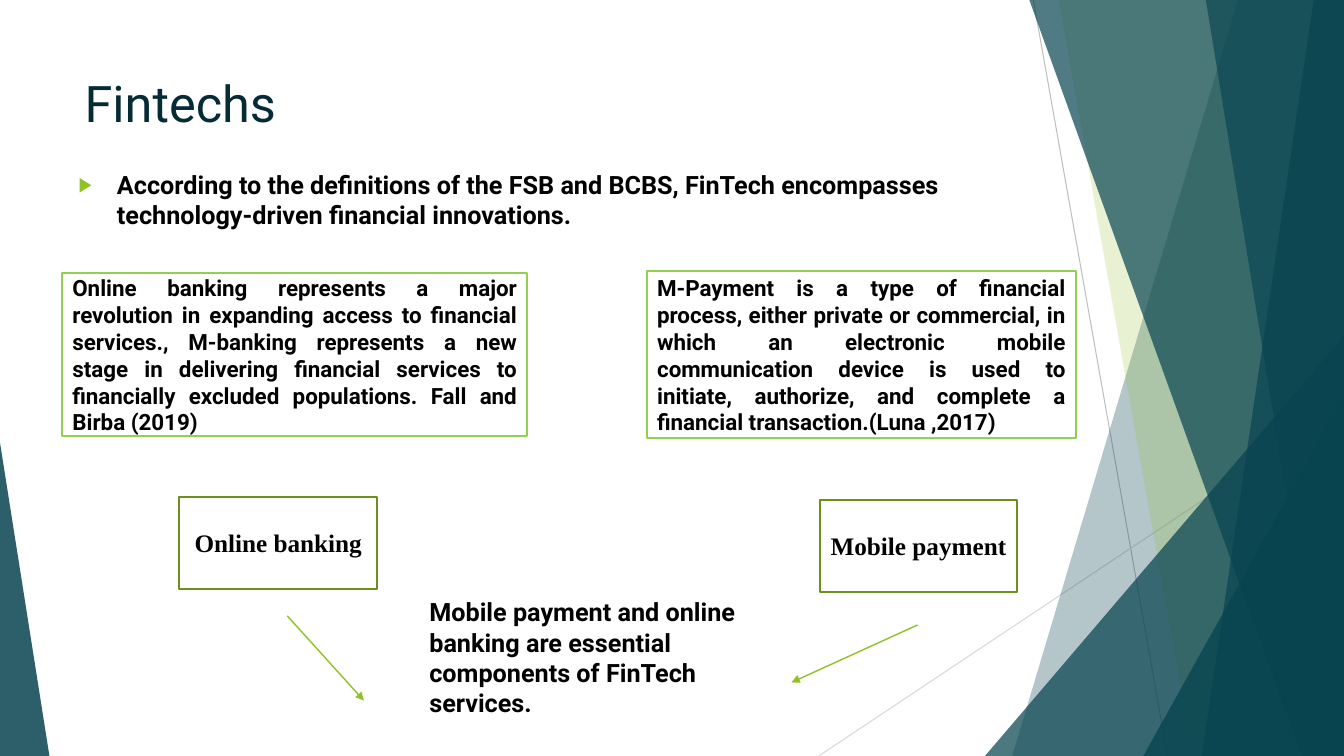
"""Build the Fintechs slide with its definitions, labels and conclusion."""
from lxml.etree import SubElement
from pptx import Presentation
from pptx.dml.color import RGBColor
from pptx.enum.shapes import MSO_CONNECTOR as Connector, MSO_SHAPE as Shape
from pptx.enum.text import MSO_ANCHOR as Anchor, MSO_AUTO_SIZE as Fit, PP_ALIGN as Align
from pptx.oxml.ns import qn
from pptx.util import Inches, Pt

WIDTH, HEIGHT = Inches(13.33), Inches(7.5)
TEAL, GREEN, BLACK = "084450", "90C226", "000000"

# All places are percentages of the slide's width and height.
HEADING = ("Fintechs", (5.55, 8.93, 70.52, 19.2))
STATEMENT = (
    "According to the definitions of the FSB and BCBS, FinTech encompasses "
    "technology-driven financial innovations.",
    (5.1, 21.73, 70.52, 56.53),
)
DEFINITIONS = [
    ("Online banking represents a major revolution in expanding access to financial "
     "services., M-banking represents a new stage in delivering financial services to "
     "financially excluded populations. Fall and Birba (2019) ",
     (4.65, 36.13, 34.58, 21.6)),
    ("M-Payment is a type of financial process, either private or commercial, in which "
     "an electronic mobile communication device is used to initiate, authorize, and "
     "complete a financial transaction.(Luna ,2017)",
     (48.16, 35.87, 31.88, 22.13)),
]
LABELS = [
    ("Online banking", (13.35, 65.73, 14.7, 12.13)),
    ("Mobile payment", (60.99, 66.13, 14.7, 12.13)),
]
CONCLUSION = (
    "Mobile payment and online banking are essential components of FinTech services.",
    (31.21, 78.27, 24.91, 17.47),
)
ARROWS = [(21.38, 81.47, 27.08, 92.67), (68.27, 82.67, 58.89, 90.27)]
RAYS = [((76.89, 0, 86.87, 100), "BFBFBF"), ((100, 53.73, 60.92, 100), "D9D9D9")]
FACETS = [
    ("band", (92.12, 75.32), TEAL, 30),
    ("band", (78.77, 88.75), GREEN, 20),
    ("right corner", (73.29, 44.4, 26.71, 55.6), TEAL, 72),
    ("band", (76.59, 96.85), TEAL, 70),
    ("band", (97.75, 89.42), TEAL, 70),
    ("band", (89.72, 98.87), TEAL, 65),
    ("right corner", (85.07, 52.4, 14.93, 47.6), TEAL, 80),
    ("left corner", (0, 58.53, 3.68, 41.47), TEAL, 85),
]
APEX = {"right corner": 1, "left corner": 0}


def rgb(color):
    return RGBColor.from_string(color)


def place(shares):
    return [round(share * side / 100) for share, side in zip(shares, (WIDTH, HEIGHT) * 2)]


def assign(target, **values):
    for name, value in values.items():
        setattr(target, name, value)


def write(shape, text, size, color=BLACK, font="Roboto", bold=True,
          align=Align.LEFT, anchor=Anchor.TOP, fit=Fit.NONE):
    frame = shape.text_frame
    frame.text = text
    assign(frame, word_wrap=True, auto_size=fit, vertical_anchor=anchor)
    paragraph = frame.paragraphs[0]
    paragraph.alignment = align
    run_font = paragraph.runs[0].font
    assign(run_font, name=font, size=Pt(size), bold=bold)
    run_font.color.rgb = rgb(color)
    return paragraph


def add_line(shares, color, width, arrow=False):
    line = slide.shapes.add_connector(Connector.STRAIGHT, *place(shares))
    line.line.color.rgb = rgb(color)
    line.line.width = Pt(width)
    properties = line.element.spPr
    if arrow:
        SubElement(properties.find(qn("a:ln")), qn("a:tailEnd"), type="triangle")
    SubElement(properties, qn("a:effectLst"))


def add_facet(kind, shares, color, opacity):
    if kind == "band":
        top, bottom = shares
        corners = [place(point) for point in ((top, 0), (100, 0), (100, 100), (bottom, 100))]
        builder = slide.shapes.build_freeform(*corners[0])
        builder.add_line_segments(corners[1:], close=True)
        facet = builder.convert_to_shape()
    else:
        facet = slide.shapes.add_shape(Shape.ISOSCELES_TRIANGLE, *place(shares))
        facet.adjustments[0] = APEX[kind]
    facet.shadow.inherit = False
    facet.line.fill.background()
    facet.fill.solid()
    facet.fill.fore_color.rgb = rgb(color)
    tint = facet.element.spPr.find(qn("a:solidFill"))[0]
    SubElement(tint, qn("a:alpha"), val=str(opacity * 1000))


def add_box(shares, outline, fill=None):
    box = slide.shapes.add_shape(Shape.RECTANGLE, *place(shares))
    box.shadow.inherit = False
    if fill:
        box.fill.solid()
        box.fill.fore_color.rgb = rgb(fill)
    else:
        box.fill.background()
    box.line.color.rgb = rgb(outline)
    box.line.width = Pt(1.5)
    return box


def fill_placeholder(holder, content, **style):
    text, shares = content
    assign(holder, **dict(zip(("left", "top", "width", "height"), place(shares))))
    slide.shapes.element.append(holder.element)
    return write(holder, text, **style)


def add_bullet(paragraph):
    paragraph.space_before = Pt(10)
    properties = paragraph._p.get_or_add_pPr()
    indent = Inches(0.38)
    properties.set("marL", str(indent))
    properties.set("indent", str(-indent))
    SubElement(SubElement(properties, qn("a:buClr")), qn("a:srgbClr"), val=GREEN)
    SubElement(properties, qn("a:buSzPct"), val="80000")
    SubElement(properties, qn("a:buChar"), char="▶")


deck = Presentation()
assign(deck, slide_width=WIDTH, slide_height=HEIGHT)
slide = deck.slides.add_slide(deck.slide_layouts[1])

for ray, color in RAYS:
    add_line(ray, color, 0.75)
for facet in FACETS:
    add_facet(*facet)

fill_placeholder(slide.shapes.title, HEADING, size=36, color="052C34", bold=False)
add_bullet(fill_placeholder(slide.placeholders[1], STATEMENT, size=18))

for definition, shares in DEFINITIONS:
    write(add_box(shares, "92D050"), definition, 16, align=Align.JUSTIFY, anchor=Anchor.MIDDLE)
for label, shares in LABELS:
    write(add_box(shares, "6B901C", "FFFFFF"), label, 18, font="Times New Roman",
          align=Align.CENTER, anchor=Anchor.MIDDLE)
for arrow in ARROWS:
    add_line(arrow, GREEN, 1, arrow=True)

conclusion, shares = CONCLUSION
write(slide.shapes.add_textbox(*place(shares)), conclusion, 18, fit=Fit.SHAPE_TO_FIT_TEXT)

deck.save("out.pptx")
